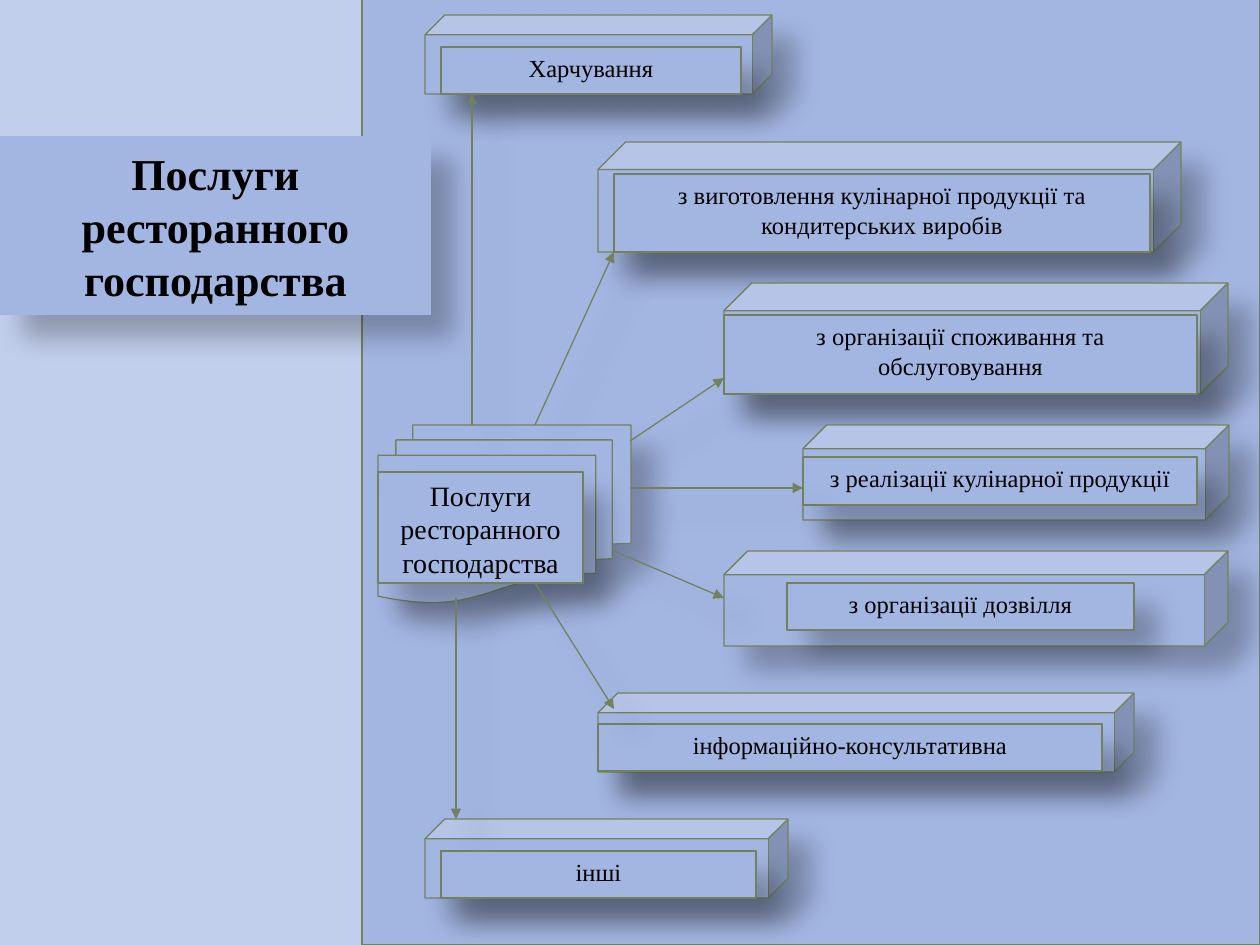
from dataclasses import dataclass

from lxml import etree
from pptx import Presentation
from pptx.dml.color import RGBColor
from pptx.enum.shapes import MSO_CONNECTOR, MSO_SHAPE
from pptx.enum.text import MSO_ANCHOR, MSO_AUTO_SIZE, PP_ALIGN
from pptx.oxml import parse_xml
from pptx.oxml.ns import qn
from pptx.util import Pt

RECTANGLE = MSO_SHAPE.RECTANGLE
CUBE = MSO_SHAPE.CUBE
DOCUMENTS = MSO_SHAPE.FLOWCHART_MULTIDOCUMENT
STRAIGHT = MSO_CONNECTOR.STRAIGHT
CENTER = PP_ALIGN.CENTER
TOP, MIDDLE = MSO_ANCHOR.TOP, MSO_ANCHOR.MIDDLE
TITLE_ONLY = 5
PX_PER_INCH = 126
TOPIC = "Послуги ресторанного господарства"


@dataclass(frozen=True)
class Theme:
    """Colours, font and type sizes of the slide."""

    backdrop: RGBColor = RGBColor(0xC1, 0xCE, 0xEC)
    fill: RGBColor = RGBColor(0xA3, 0xB6, 0xE2)
    line: RGBColor = RGBColor(0x72, 0x82, 0x5E)
    text: RGBColor = RGBColor(0, 0, 0)
    font: str = "Times New Roman"
    title_size: float = 25.2
    topic_size: int = 16
    label_size: int = 14
    line_width: float = 0.75


THEME = Theme()

SERVICES = [
    ("Харчування", (425, 15, 347, 79), (441, 47, 300, 47)),
    ("з виготовлення кулінарної продукції та кондитерських виробів",
     (598, 142, 583, 110), (614, 174, 536, 78)),
    ("з організації споживання та обслуговування",
     (724, 283, 504, 111), (724, 315, 473, 79)),
    ("з реалізації кулінарної продукції",
     (803, 425, 426, 95), (803, 457, 394, 48)),
    ("з організації дозвілля", (724, 551, 504, 95), (787, 583, 347, 47)),
    ("інформаційно-консультативна",
     (598, 693, 536, 79), (598, 724, 504, 47)),
    ("інші", (425, 819, 363, 79), (441, 851, 315, 47)),
]

ARROWS = [
    (472, 425, 472, 94),
    (535, 425, 614, 252),
    (630, 441, 724, 378),
    (630, 488, 803, 488),
    (614, 551, 724, 598),
    (535, 583, 614, 709),
    (456, 598, 456, 819),
]


def px(length):
    """Turn pixels into EMU."""
    return length * 914400 // PX_PER_INCH


def add_shadow(item):
    """Cast a soft shadow to the lower right."""
    item._element.spPr.append(parse_xml(
        '<a:effectLst xmlns:a="http://schemas.openxmlformats.org/drawingml/2006/main">'
        f'<a:outerShdw blurRad="{Pt(15)}" dist="{Pt(18)}" dir="2700000" '
        'algn="tl" rotWithShape="0"><a:srgbClr val="000000">'
        '<a:alpha val="26000"/></a:srgbClr></a:outerShdw></a:effectLst>'))


def style_line(line):
    """Give an outline or arrow the theme's line."""
    line.color.rgb = THEME.line
    line.width = Pt(THEME.line_width)


def fill_shape(shape):
    """Fill a shape with the theme colour."""
    shape.fill.solid()
    shape.fill.fore_color.rgb = THEME.fill


def set_text(shape, text, size, anchor, bold=False):
    """Write one centred paragraph in a shape."""
    frame = shape.text_frame
    frame.text = text
    frame.word_wrap = True
    frame.auto_size = MSO_AUTO_SIZE.NONE
    frame.vertical_anchor = anchor
    para = frame.paragraphs[0]
    para.alignment = CENTER
    para.font.name = THEME.font
    para.font.size = Pt(size)
    para.font.bold = bold
    para.font.color.rgb = THEME.text


def add_block(page, kind, bounds):
    """Add an outlined, shadowed preset shape."""
    block = page.shapes.add_shape(kind, *map(px, bounds))
    fill_shape(block)
    style_line(block.line)
    add_shadow(block)
    return block


def add_label(page, text, bounds, size):
    """Add a rectangle that holds text."""
    set_text(add_block(page, RECTANGLE, bounds), text, size, TOP)


def add_service(page, text, cube_bounds, label_bounds):
    """Add a cube with its label on the front."""
    add_block(page, CUBE, cube_bounds)
    add_label(page, text, label_bounds, THEME.label_size)


def add_arrow(page, ends):
    """Add a straight arrow between two points."""
    arrow = page.shapes.add_connector(STRAIGHT, *map(px, ends))
    style_line(arrow.line)
    etree.SubElement(arrow.line._get_or_add_ln(), qn("a:tailEnd"), type="triangle")
    add_shadow(arrow)


def place_title(page):
    """Format the title and bring it to the front."""
    title = page.shapes.title
    title.left, title.top, title.width, title.height = map(px, (0, 136, 431, 179))
    fill_shape(title)
    title.line.fill.background()
    add_shadow(title)
    set_text(title, TOPIC, THEME.title_size, MIDDLE, bold=True)
    title._element.getparent().append(title._element)


def main():
    """Build and save the slide."""
    deck = Presentation()
    deck.slide_width, deck.slide_height = px(1260), px(945)
    page = deck.slides.add_slide(deck.slide_layouts[TITLE_ONLY])
    page.background.fill.solid()
    page.background.fill.fore_color.rgb = THEME.backdrop
    add_block(page, RECTANGLE, (362, -31, 898, 976))
    add_block(page, DOCUMENTS, (378, 425, 253, 178))
    for text, cube_bounds, label_bounds in SERVICES:
        add_service(page, text, cube_bounds, label_bounds)
    add_label(page, TOPIC, (378, 472, 205, 111), THEME.topic_size)
    for ends in ARROWS:
        add_arrow(page, ends)
    place_title(page)
    deck.save("out.pptx")


if __name__ == "__main__":
    main()
